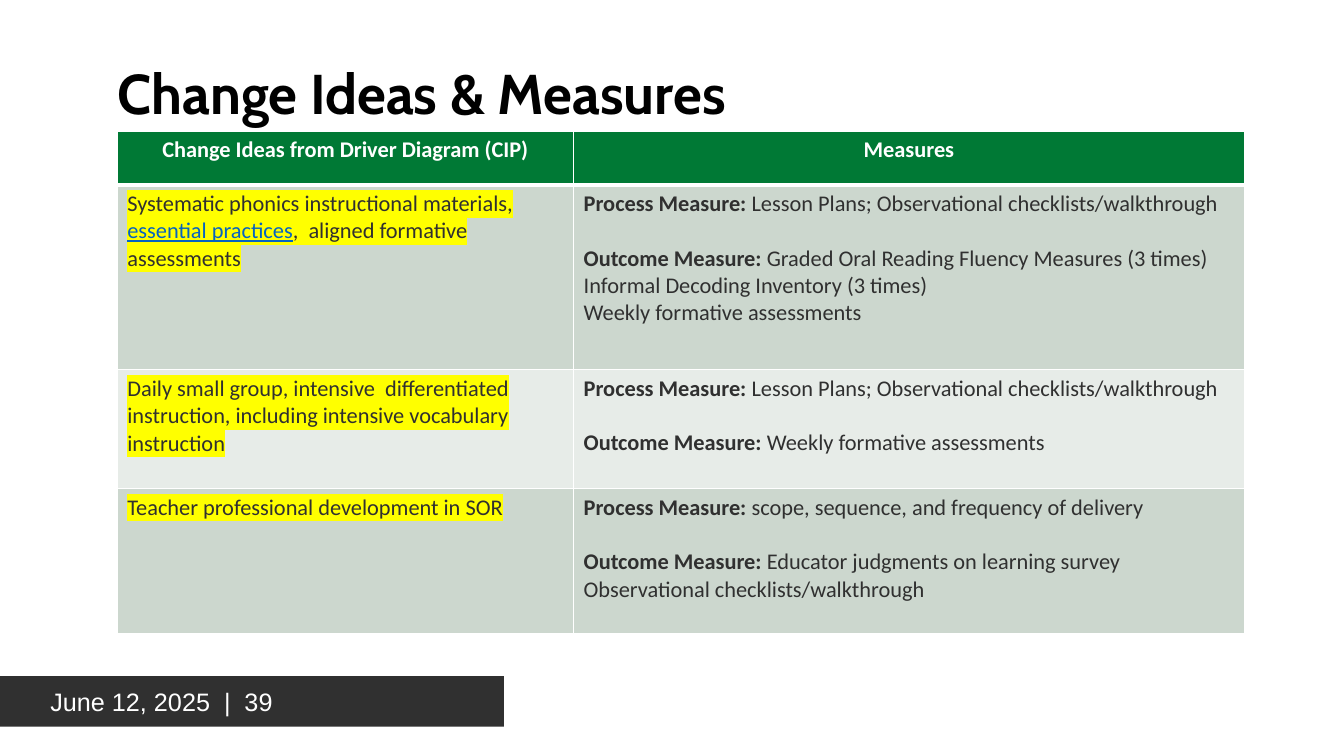
import pptx
import pptx.dml.color
import pptx.enum.shapes
import pptx.enum.text
import pptx.oxml
import pptx.oxml.ns
import pptx.util

Pt = pptx.util.Pt
PP_ALIGN = pptx.enum.text.PP_ALIGN
ANCHOR = pptx.enum.text.MSO_ANCHOR
NS = pptx.oxml.ns.nsdecls("a")

GREEN, SAGE, PALE = "007935", "CCD7CE", "E7ECE8"
DARK, WHITE, YELLOW, LINK_BLUE = "303030", "FFFFFF", "FFFF00", "0563C1"

COLUMN_WIDTHS = [326, 479]
ROW_HEIGHTS = [38.5, 132, 85, 103.5]
LINE_GAP = 19.5

HEADINGS = ["Change Ideas from Driver Diagram (CIP)", "Measures"]
LINK_TEXT = "essential practices"
WALKTHROUGH = "Lesson Plans; Observational checklists/walkthrough"
# Each row: idea runs, process measure, outcome measures
ROWS = [
    (["Systematic phonics instructional materials, ", LINK_TEXT,
      ",  aligned formative assessments"],
     WALKTHROUGH,
     ["Graded Oral Reading Fluency Measures (3 times)",
      "Informal Decoding Inventory (3 times)",
      "Weekly formative assessments"]),
    (["Daily small group, intensive  differentiated instruction, "
      "including intensive vocabulary instruction"],
     WALKTHROUGH,
     ["Weekly formative assessments"]),
    (["Teacher professional development in SOR"],
     "scope, sequence, and frequency of delivery",
     ["Educator judgments on learning survey",
      "Observational checklists/walkthrough"]),
]


def rgb(color):
    return pptx.dml.color.RGBColor.from_string(color)


def add_run(p, text, color=DARK, highlight=None, **font):
    r = p.add_run()
    r.text = text
    r.font.fill.solid()
    r.font.fill.fore_color.rgb = rgb(color)
    if highlight:
        r._r.get_or_add_rPr().append(pptx.oxml.parse_xml(
            f'<a:highlight {NS}><a:srgbClr val="{highlight}"/></a:highlight>'))
    for name, value in ({"name": "Calibri", "size": Pt(16), "bold": False} | font).items():
        setattr(r.font, name, value)


def set_frame(tf, **values):
    for name, value in values.items():
        setattr(tf, name, value)


def style_cell(cell, fill, top, bottom):
    """Fill the cell and draw white borders with the given top and bottom widths."""
    cell.fill.solid()
    cell.fill.fore_color.rgb = rgb(fill)
    tcPr = cell._tc.get_or_add_tcPr()
    for i, (side, width) in enumerate(zip("LRTB", (1, 1, top, bottom))):
        tcPr.insert(i, pptx.oxml.parse_xml(
            f'<a:ln{side} {NS} w="{Pt(width)}"><a:solidFill>'
            f'<a:srgbClr val="{WHITE}"/></a:solidFill></a:ln{side}>'))


def fill_measures(tf, process, outcomes):
    p = tf.paragraphs[0]
    add_run(p, "Process Measure: ", bold=True)
    add_run(p, process)
    for i, outcome in enumerate(outcomes):
        p = tf.add_paragraph()
        if i == 0:
            p.space_before = Pt(LINE_GAP)
            add_run(p, "Outcome Measure: ", bold=True)
        add_run(p, outcome)


def add_title(s, left, top, width, height):
    tf = s.shapes.add_textbox(Pt(left), Pt(top), Pt(width), Pt(height)).text_frame
    set_frame(tf, word_wrap=True, vertical_anchor=ANCHOR.MIDDLE, margin_left=Pt(36),
              margin_top=0, margin_right=0, margin_bottom=0)
    p = tf.paragraphs[0]
    p.line_spacing = 0.9
    add_run(p, "Change Ideas & Measures", "000000", name="Cabin", size=Pt(40), bold=True)


def add_measures_table(s, left, top):
    table = s.shapes.add_table(
        len(ROW_HEIGHTS), len(COLUMN_WIDTHS), Pt(left), Pt(top),
        Pt(sum(COLUMN_WIDTHS)), Pt(sum(ROW_HEIGHTS))).table
    for column, width in zip(table.columns, COLUMN_WIDTHS):
        column.width = Pt(width)
    for row, height in zip(table.rows, ROW_HEIGHTS):
        row.height = Pt(height)

    for cell, heading in zip(table.rows[0].cells, HEADINGS):
        style_cell(cell, GREEN, 1, 3)
        p = cell.text_frame.paragraphs[0]
        p.alignment = PP_ALIGN.CENTER
        add_run(p, heading, WHITE, bold=True)

    for i, (idea, process, outcomes) in enumerate(ROWS, 1):
        idea_cell, measure_cell = table.rows[i].cells
        for cell in (idea_cell, measure_cell):
            style_cell(cell, SAGE if i % 2 else PALE, 3 if i == 1 else 1, 1)
        for text in idea:
            is_link = text == LINK_TEXT
            add_run(idea_cell.text_frame.paragraphs[0], text,
                    LINK_BLUE if is_link else DARK, YELLOW, underline=is_link)
        fill_measures(measure_cell.text_frame, process, outcomes)


def add_footer(s, left, top, width, height):
    sp = s.shapes.add_shape(pptx.enum.shapes.MSO_SHAPE.RECTANGLE,
                            Pt(left), Pt(top), Pt(width), Pt(height))
    sp.shadow.inherit = False
    sp.fill.solid()
    sp.fill.fore_color.rgb = rgb(DARK)
    sp.line.fill.background()
    tf = sp.text_frame
    set_frame(tf, word_wrap=True, vertical_anchor=ANCHOR.MIDDLE, margin_left=Pt(36))
    p = tf.paragraphs[0]
    p.alignment = PP_ALIGN.LEFT
    add_run(p, "June 12, 2025  |  39", WHITE, name="Arial", size=Pt(18))


def main():
    prs = pptx.Presentation()
    prs.slide_width, prs.slide_height = Pt(960), Pt(540)
    s = prs.slides.add_slide(prs.slide_layouts[6])
    add_footer(s, 0, 483, 360, 36)
    add_title(s, 48, 24, 864, 90)
    add_measures_table(s, 83.75, 93.75)
    prs.save("out.pptx")


if __name__ == "__main__":
    main()
